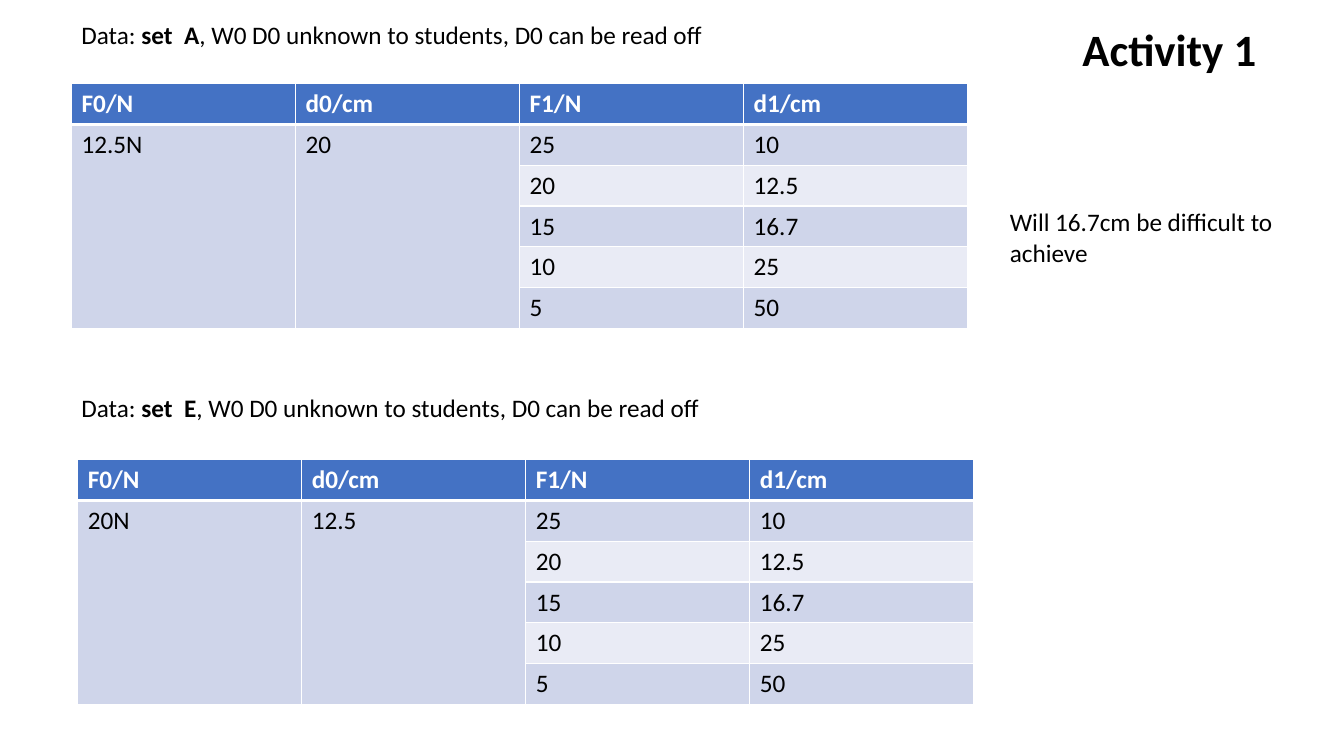
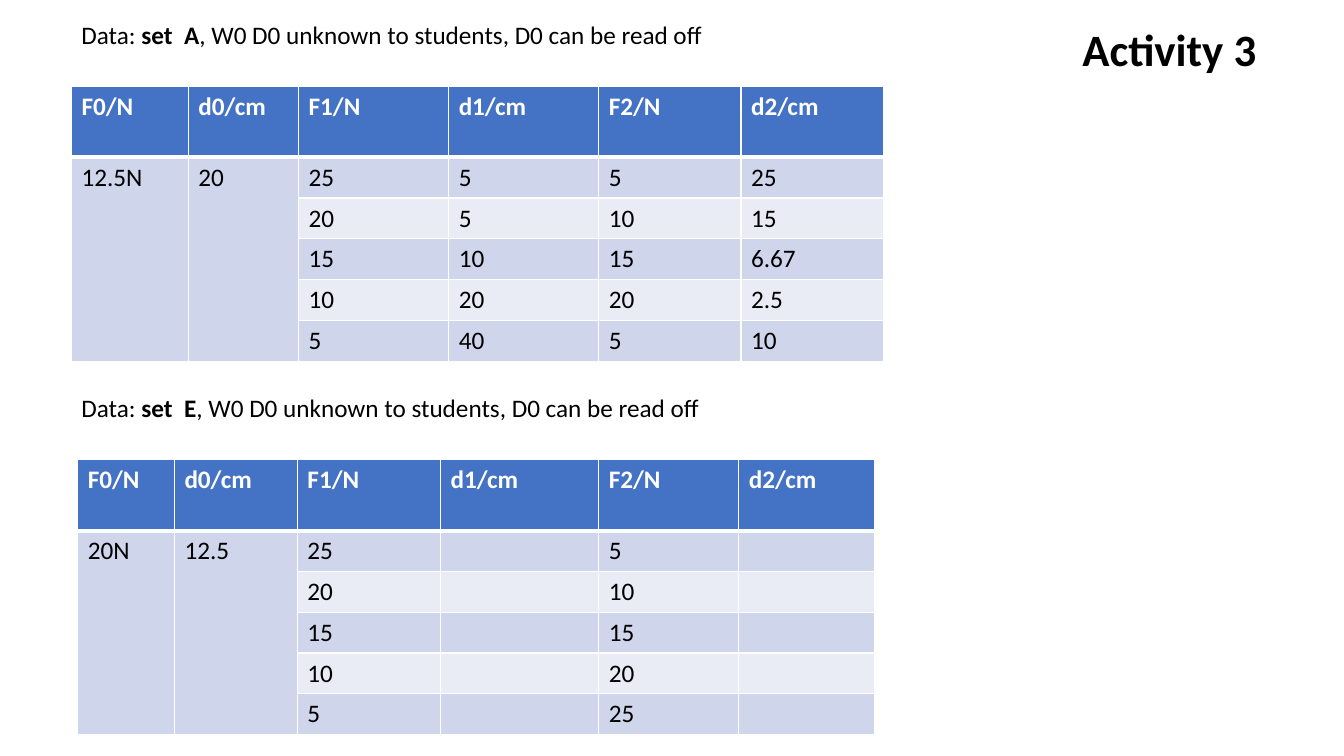
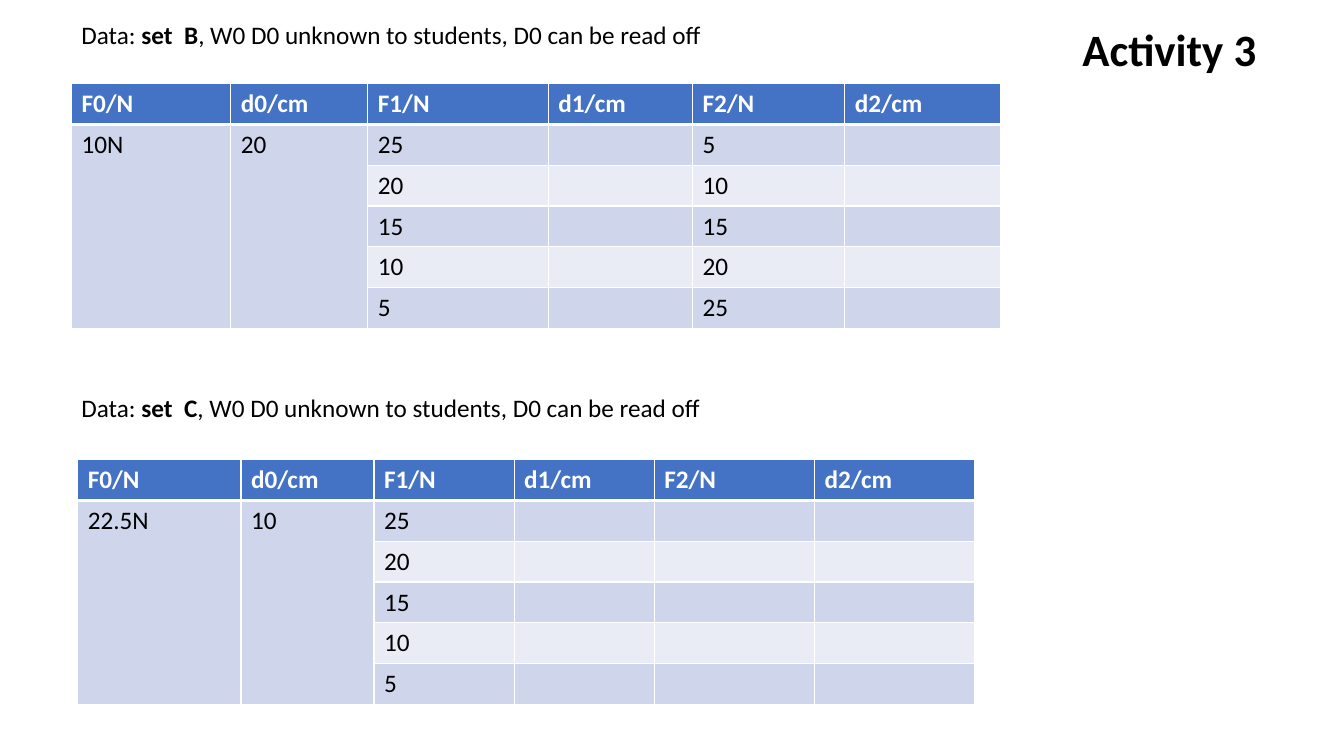
from lxml.etree import SubElement
from pptx import Presentation
from pptx.dml.color import RGBColor as Rgb
from pptx.enum.text import MSO_AUTO_SIZE as AutoSize
from pptx.oxml.ns import qn
from pptx.util import Inches, Pt

COLORS = {"text": "000000", "header": "4472C4", "header_text": "FFFFFF",
          "odd_row": "CFD5EA", "even_row": "E9EBF5", "rule": "FFFFFF"}
FONT = "Calibri"
BODY_SIZE = 18
TITLE_SIZE = 32
READINGS = 5
ROW_HEIGHT = 5.4
TALL_HEADER = 9.4
FORCES = ["25", "20", "15", "10", "5"]
RISING = FORCES[::-1]
LENGTHS = ["10", "12.5", "16.7", "25", "50"]
BLANK = [""] * READINGS


def write(paragraph, text, size=BODY_SIZE, bold=False, color="text"):
    run = paragraph.add_run()
    run.text = text
    run.font.name = FONT
    run.font.size = Pt(size)
    run.font.bold = bold
    run.font.color.rgb = Rgb.from_string(COLORS[color])


class Deck:
    def __init__(self):
        self.prs = Presentation()
        self.prs.slide_width = Inches(13.33)
        self.prs.slide_height = Inches(7.5)
        self.slide = None

    def across(self, percent):
        return round(self.prs.slide_width * percent / 100)

    def down(self, percent):
        return round(self.prs.slide_height * percent / 100)

    def place(self, left, top, width, height):
        return (self.across(left), self.down(top),
                self.across(width), self.down(height))

    def new_slide(self, title):
        self.slide = self.prs.slides.add_slide(self.prs.slide_layouts[6])
        self.text_box((79.8, 2.27, 16.05, 8.53), [(title, True)], TITLE_SIZE)

    def text_box(self, area, parts, size=BODY_SIZE):
        frame = self.slide.shapes.add_textbox(*self.place(*area)).text_frame
        frame.word_wrap = True
        frame.auto_size = AutoSize.SHAPE_TO_FIT_TEXT
        for text, bold in parts:
            write(frame.paragraphs[0], text, size=size, bold=bold)

    def caption(self, top, set_name):
        self.text_box((5.32, top, 48.4, 5.33), [
            ("Data: ", False),
            (f"set  {set_name}", True),
            (", W0 D0 unknown to students, D0 can be read off", False)])

    def borders(self, cell, row):
        heavy = {0: "lnB", 1: "lnT"}.get(row)
        properties = cell._tc.get_or_add_tcPr()
        for side in ("lnL", "lnR", "lnT", "lnB"):
            width = Pt(3 if side == heavy else 1)
            line = SubElement(properties, qn(f"a:{side}"), w=str(width))
            fill = SubElement(line, qn("a:solidFill"))
            SubElement(fill, qn("a:srgbClr"), val=COLORS["rule"])

    def cell(self, cell, row, text):
        self.borders(cell, row)
        band = "header" if row == 0 else "odd_row" if row % 2 else "even_row"
        cell.fill.solid()
        cell.fill.fore_color.rgb = Rgb.from_string(COLORS[band])
        if text:
            write(cell.text_frame.paragraphs[0], text, bold=row == 0,
                  color="header_text" if row == 0 else "text")

    def data_table(self, left, top, widths, columns, header_height=ROW_HEIGHT):
        area = self.place(left, top, sum(widths),
                          header_height + READINGS * ROW_HEIGHT)
        table = self.slide.shapes.add_table(
            READINGS + 1, len(columns), *area).table
        for index, row in enumerate(table.rows):
            row.height = self.down(ROW_HEIGHT if index else header_height)
        for index, (heading, values) in enumerate(columns.items()):
            table.columns[index].width = self.across(widths[index])
            shared = isinstance(values, str)
            readings = [values] + BLANK[1:] if shared else values
            for row, text in enumerate([heading, *readings]):
                self.cell(table.cell(row, index), row, text)
            if shared:
                table.cell(1, index).merge(table.cell(READINGS, index))


def one_force(f0, d0):
    return {"F0/N": f0, "d0/cm": d0, "F1/N": FORCES, "d1/cm": LENGTHS}


def two_forces(f0, d0, d1=BLANK, f2=BLANK, d2=BLANK):
    return {"F0/N": f0, "d0/cm": d0, "F1/N": FORCES,
            "d1/cm": d1, "F2/N": f2, "d2/cm": d2}


ACTIVITIES = [
    ("Activity 1", ROW_HEIGHT, 11.07, [
        ("A", [16.67] * 4, one_force("12.5N", "20")),
        ("E", [16.67] * 4, one_force("20N", "12.5"))]),
    ("Activity 3", TALL_HEADER, 11.4, [
        ("A", [8.7, 8.2, 11.17, 11.17, 10.58, 10.58],
         two_forces("12.5N", "20", ["5", "5", "10", "20", "40"],
                    ["5", "10", "15", "20", "5"],
                    ["25", "15", "6.67", "2.5", "10"])),
        ("E", [7.2, 9.15, 10.65, 11.78, 10.42, 10.12],
         two_forces("20N", "12.5", f2=RISING))]),
    ("Activity 3", ROW_HEIGHT, 11.07, [
        ("B", [11.85, 10.2, 13.43, 10.73, 11.33, 11.63],
         two_forces("10N", "20", f2=RISING)),
        ("C", [12.15, 9.9, 10.43, 10.43, 11.93, 11.93],
         two_forces("22.5N", "10"))]),
]


def main():
    deck = Deck()
    for number, (title, header, first_top, data_sets) in enumerate(ACTIVITIES):
        deck.new_slide(title)
        places = [(1.87, 5.32, first_top), (51.2, 5.78, 60.8)]
        for (caption_top, left, top), (name, widths, columns) in zip(
                places, data_sets):
            deck.caption(caption_top, name)
            deck.data_table(left, top, widths, columns, header)
        if number == 0:
            deck.text_box((74.4, 26.67, 21.4, 9.47),
                          [("Will 16.7cm be difficult to achieve", False)])
    deck.prs.save("out.pptx")


if __name__ == "__main__":
    main()
